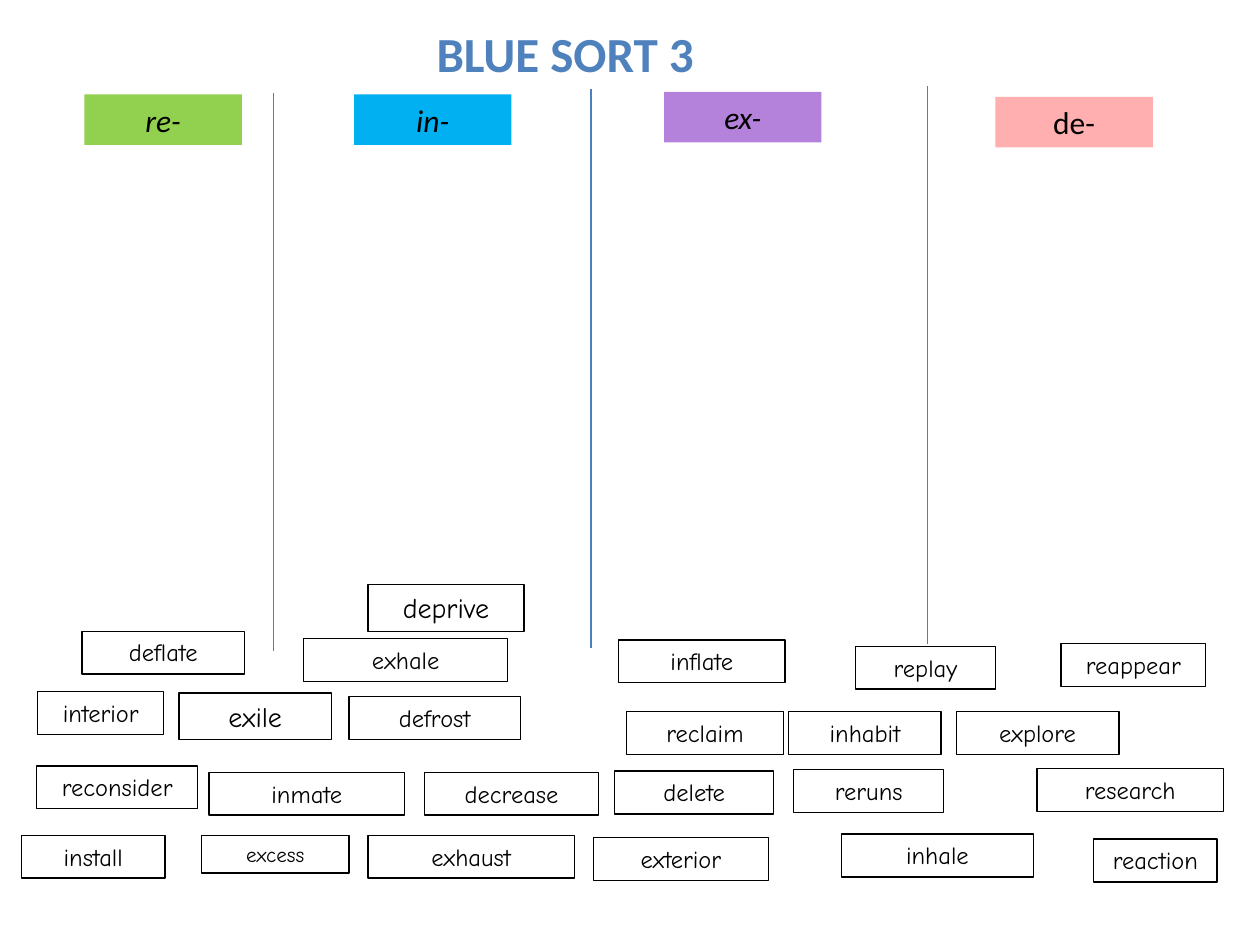
from lxml import etree
from pptx import Presentation
from pptx.dml.color import RGBColor
from pptx.enum import shapes, text
from pptx.oxml import ns
from pptx.util import Inches, Pt

BLACK = RGBColor(0x00, 0x00, 0x00)
BLUE = RGBColor(0x4F, 0x81, 0xBD)
RULE = RGBColor(0x4B, 0x7E, 0xBC)
GREEN = RGBColor(0x92, 0xD0, 0x50)
CYAN = RGBColor(0x00, 0xB0, 0xF0)
PURPLE = RGBColor(0xB4, 0x82, 0xDA)
PINK = RGBColor(0xFF, 0xAF, 0xAF)

# prefix, left, top, fill, italic
HEADS = [
    ("re-", 0.67, 0.75, GREEN, True),
    ("in-", 2.81, 0.75, CYAN, True),
    ("ex-", 5.27, 0.73, PURPLE, True),
    ("de-", 7.9, 0.77, PINK, False),
]

# left, top of each column rule
RULES = [(2.17, 0.74), (7.36, 0.68), (4.69, 0.71)]
DROP = 4.43

# word, left, top, width
CARDS = [
    ("exile", 1.42, 5.5, 1.21),
    ("interior", 0.3, 5.49, 1),
    ("inflate", 4.91, 5.08, 1.32),
    ("deprive", 2.92, 4.64, 1.24),
    ("decrease", 3.37, 6.13, 1.38),
    ("reclaim", 4.97, 5.65, 1.25),
    ("exhaust", 2.92, 6.63, 1.64),
    ("inhabit", 6.26, 5.65, 1.21),
    ("reruns", 6.3, 6.11, 1.19),
    ("research", 8.23, 6.1, 1.48),
    ("explore", 7.59, 5.65, 1.29),
    ("exhale", 2.41, 5.07, 1.62),
    ("replay", 6.79, 5.13, 1.11),
    ("inmate", 1.66, 6.13, 1.55),
    ("delete", 4.88, 6.12, 1.26),
    ("deflate", 0.65, 5.01, 1.29),
    ("defrost", 2.77, 5.53, 1.36),
    ("exterior", 4.71, 6.65, 1.39),
    ("reaction", 8.68, 6.66, 0.98),
    ("reconsider", 0.29, 6.08, 1.28),
    ("install", 0.17, 6.63, 1.14),
    ("reappear", 8.42, 5.11, 1.15),
    ("inhale", 6.68, 6.62, 1.52),
    ("excess", 1.6, 6.63, 1.17),
]
SIZES = {"exile": 16, "deprive": 16, "excess": 12}
HEIGHTS = {12: 0.3, 14: 0.34, 16: 0.37}


class Sort:
    head_font = "Calibri"
    card_font = "Comic Neue"

    def __init__(self, slide):
        self.slide = slide

    def label(self, shape, words, font, size, color=BLACK, bold=False, italic=False):
        frame = shape.text_frame
        frame.word_wrap = True
        frame.auto_size = text.MSO_AUTO_SIZE.SHAPE_TO_FIT_TEXT
        frame.vertical_anchor = text.MSO_ANCHOR.TOP
        para = frame.paragraphs[0]
        para.alignment = text.PP_ALIGN.CENTER
        run = para.add_run()
        run.text = words
        run.font.name = font
        run.font.size = Pt(size)
        run.font.bold = bold
        run.font.italic = italic
        run.font.color.rgb = color

    def rect(self, left, top, width, height):
        shape = self.slide.shapes.add_shape(
            shapes.MSO_SHAPE.RECTANGLE,
            Inches(left), Inches(top), Inches(width), Inches(height))
        shape.shadow.inherit = False
        return shape

    def title(self, words):
        box = self.slide.shapes.add_textbox(
            Inches(2.18), Inches(0.14), Inches(4.61), Inches(0.57))
        self.label(box, words, self.head_font, 28, BLUE, bold=True)

    def head(self, words, left, top, fill, italic):
        shape = self.rect(left, top, 1.25, 0.4)
        shape.fill.solid()
        shape.fill.fore_color.rgb = fill
        shape.line.fill.background()
        self.label(shape, words, self.head_font, 18, italic=italic)

    def rule(self, left, top):
        line = self.slide.shapes.add_connector(
            shapes.MSO_CONNECTOR.STRAIGHT,
            Inches(left), Inches(top), Inches(left), Inches(top + DROP))
        line.line.color.rgb = RULE
        line.line.width = Pt(0.75)
        etree.SubElement(line._element.spPr, ns.qn("a:effectLst"))

    def card(self, word, left, top, width):
        size = SIZES.get(word, 14)
        shape = self.rect(left, top, width, HEIGHTS[size])
        shape.fill.background()
        shape.line.color.rgb = BLACK
        shape.line.width = Pt(0.75)
        self.label(shape, word, self.card_font, size)


def main():
    deck = Presentation()
    deck.slide_width = Inches(10)
    deck.slide_height = Inches(7.5)
    sort = Sort(deck.slides.add_slide(deck.slide_layouts[6]))
    for head in HEADS:
        sort.head(*head)
    for rule in RULES:
        sort.rule(*rule)
    for card in CARDS:
        sort.card(*card)
    sort.title("BLUE SORT 3")
    deck.save("out.pptx")


if __name__ == "__main__":
    main()
